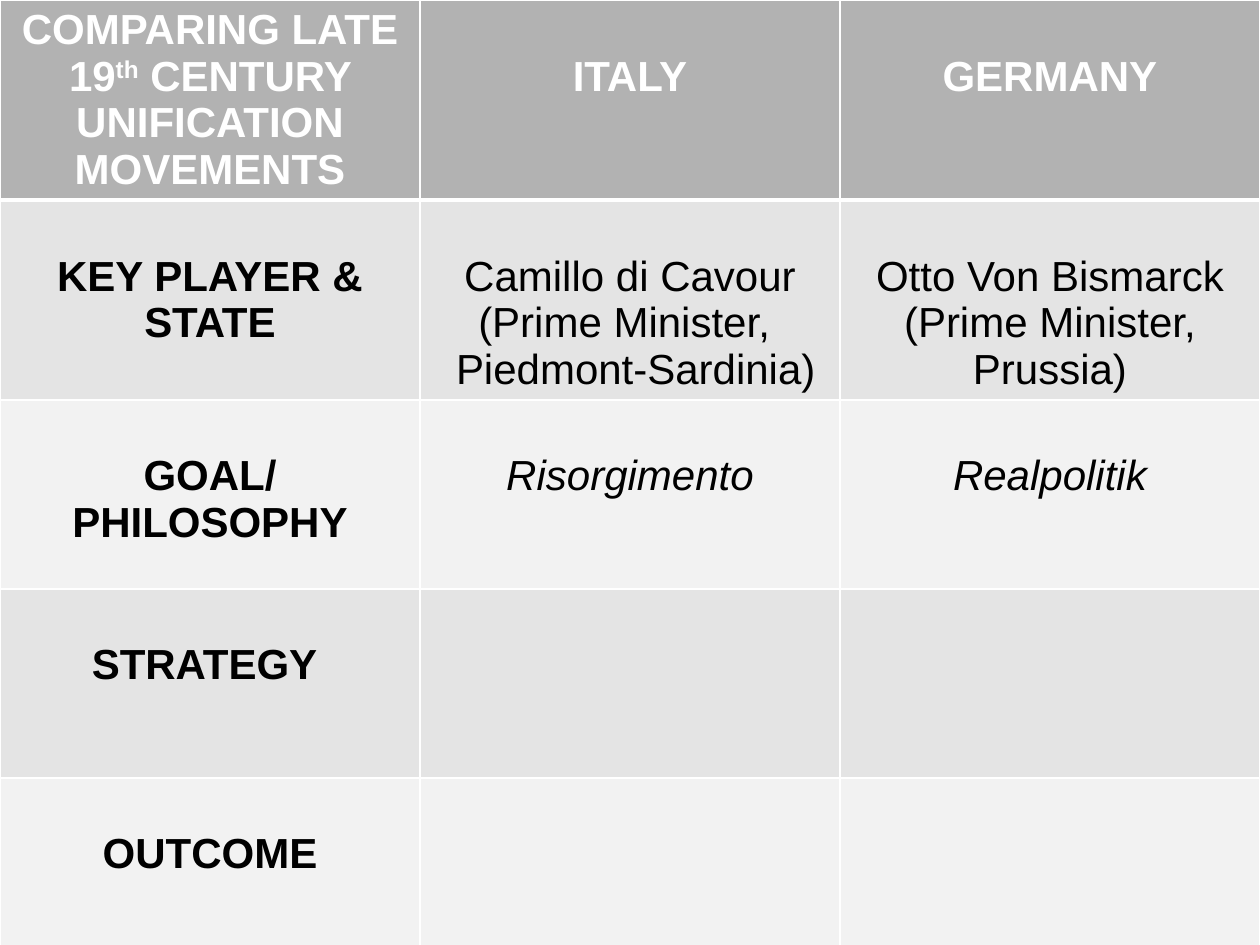
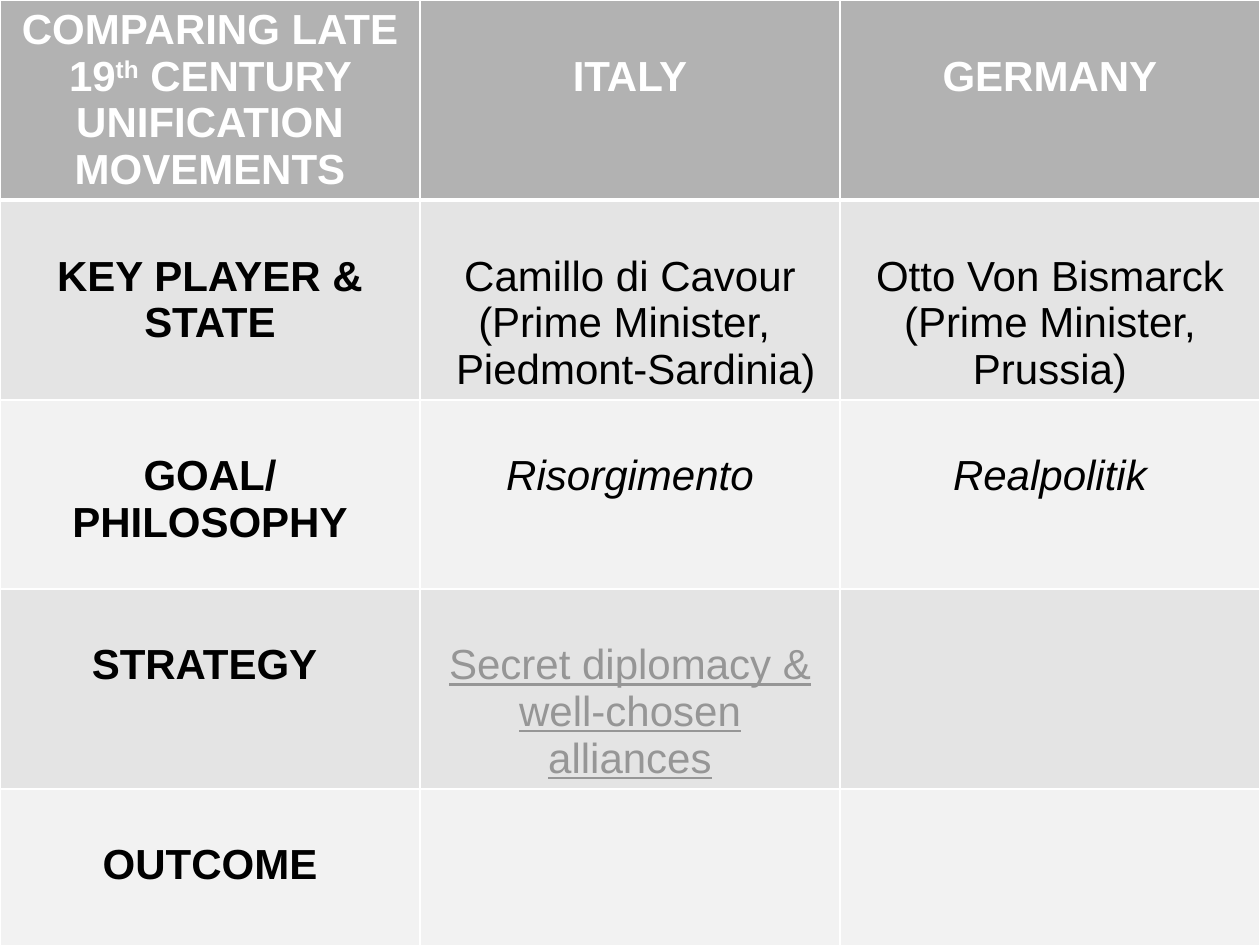
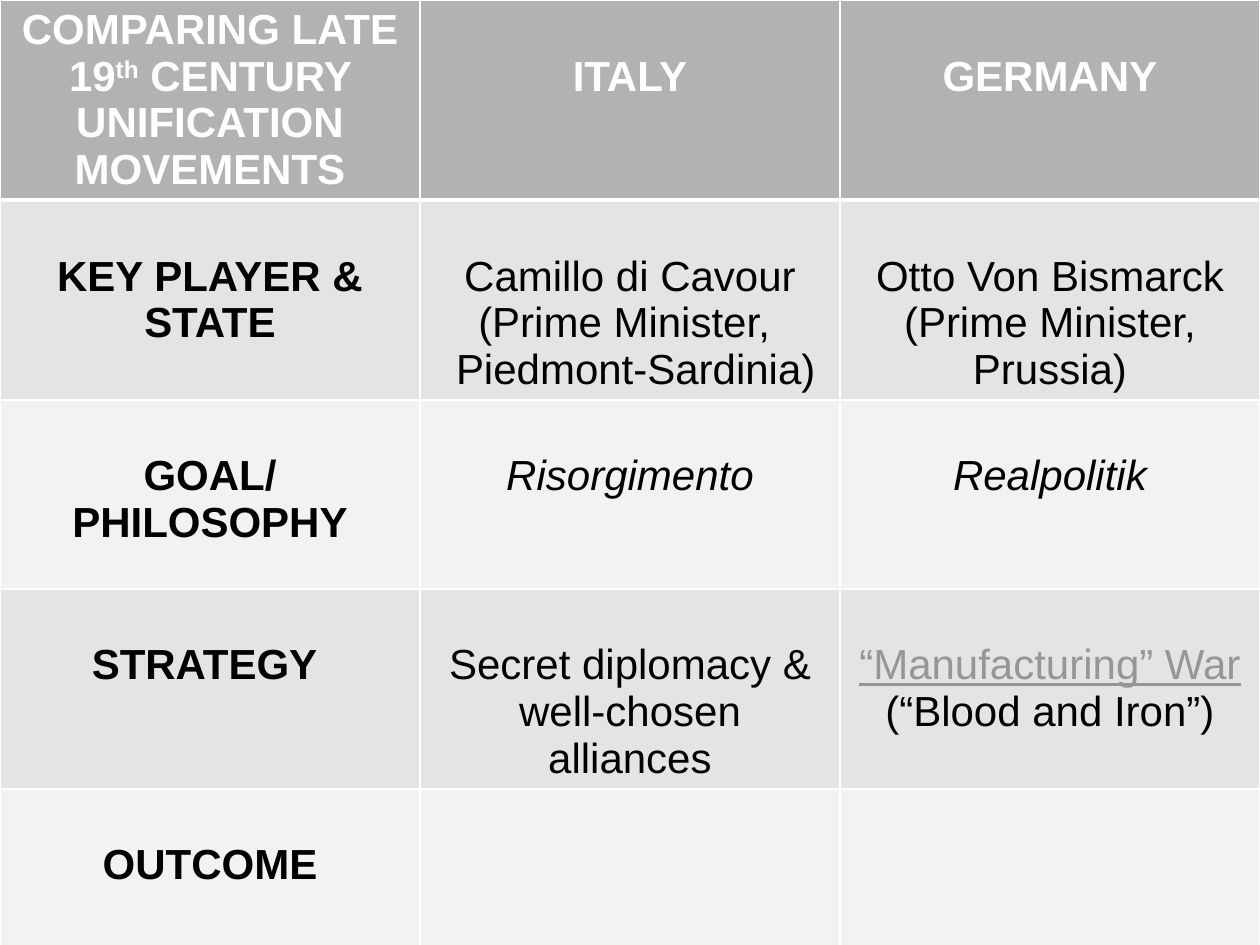
from lxml import etree
from pptx import Presentation
from pptx.dml.color import RGBColor
from pptx.enum.text import PP_ALIGN
from pptx.oxml.ns import qn
from pptx.util import Cm, Pt

CENTER = PP_ALIGN.CENTER
WIDTH, HEIGHT = Cm(25.4), Cm(19.05)
ONE_LINE_DOWN = Cm(1.07)
BLANK_LAYOUT = 6

COLORS = {
    "background": "000000",
    "header": "B2B2B2",
    "odd": "E4E4E4",
    "even": "F2F2F2",
    "grid": "FFFFFF",
    "white": "FFFFFF",
    "black": "000000",
    "accent": "969696",
}

BASE = {"name": "Arial", "size": Pt(24), "bold": False}
STYLES = {
    "header": ("white", {"bold": True}),
    "label": ("black", {"bold": True}),
    "plain": ("black", {}),
    "term": ("black", {"italic": True}),
    "accent": ("accent", {"underline": True}),
}

HEADERS = [
    [("COMPARING LATE 19", "th", " CENTURY UNIFICATION MOVEMENTS")],
    ["ITALY"],
    ["GERMANY"],
]
KEY_PLAYERS = [
    ("plain", ["Camillo di Cavour", "(Prime Minister, ", " Piedmont-Sardinia)"]),
    ("plain", ["Otto Von Bismarck", "(Prime Minister, Prussia)"]),
]
GOALS = [("term", ["Risorgimento"]), ("term", ["Realpolitik"])]
DIPLOMACY = ["Secret diplomacy & well-chosen alliances"]
STRATEGIES = [
    [],
    [("accent", DIPLOMACY)],
    [("plain", DIPLOMACY),
     ("accent plain", ["“Manufacturing” War", "(“Blood and Iron”)"])],
]


def rgb(name):
    """Return the named colour."""
    return RGBColor.from_string(COLORS[name])


def add_run(p, text, style, superscript=False):
    """Add one formatted run to a paragraph."""
    color, extra = STYLES[style]
    r = p.add_run()
    r.text = text
    for key, value in {**BASE, **extra}.items():
        setattr(r.font, key, value)
    r.font.color.rgb = rgb(color)
    if superscript:
        r._r.get_or_add_rPr().set("baseline", "30000")


def fill_text(cell, styles, paragraphs):
    """Write centred paragraphs, the last style serving those that remain."""
    tf = cell.text_frame
    names = styles.split()
    for i, content in enumerate(paragraphs):
        p = tf.add_paragraph() if i else tf.paragraphs[0]
        p.alignment = CENTER
        parts = (content,) if isinstance(content, str) else content
        for j, text in enumerate(parts):
            add_run(p, text, names[min(i, len(names) - 1)], j == 1)


def set_borders(cell, row):
    """Draw the white grid, thicker under the header row."""
    widths = {
        "a:lnL": 1,
        "a:lnR": 1,
        "a:lnT": 3 if row == 1 else 1,
        "a:lnB": 3 if row == 0 else 1,
    }
    tcPr = cell._tc.get_or_add_tcPr()
    for tag, width in widths.items():
        line = etree.SubElement(tcPr, qn(tag), w=str(Pt(width)))
        fill = etree.SubElement(line, qn("a:solidFill"))
        etree.SubElement(fill, qn("a:srgbClr"), val=COLORS["grid"])


def format_cell(cell, row, col):
    """Give a cell its grid lines, band fill and top margin."""
    set_borders(cell, row)
    band = "header" if row == 0 else "odd" if row % 2 else "even"
    cell.fill.solid()
    cell.fill.fore_color.rgb = rgb(band)
    if row or col:
        cell.margin_top = ONE_LINE_DOWN


def add_comparison_slide(prs, strategies):
    """Add a slide filled by the comparison table."""
    s = prs.slides.add_slide(prs.slide_layouts[BLANK_LAYOUT])
    s.background.fill.solid()
    s.background.fill.fore_color.rgb = rgb("background")
    rows = [
        [("header", header) for header in HEADERS],
        [("label", ["KEY PLAYER & STATE"]), *KEY_PLAYERS],
        [("label", ["GOAL/PHILOSOPHY"]), *GOALS],
        [("label", ["STRATEGY "]), *strategies],
        [("label", ["OUTCOME"])],
    ]
    table = s.shapes.add_table(len(rows), len(HEADERS), 0, 0, WIDTH, HEIGHT).table
    for i, contents in enumerate(rows):
        for j in range(len(HEADERS)):
            format_cell(table.cell(i, j), i, j)
        for j, (styles, paragraphs) in enumerate(contents):
            fill_text(table.cell(i, j), styles, paragraphs)


def main():
    """Build one slide for each step of the strategy row."""
    prs = Presentation()
    prs.slide_width, prs.slide_height = WIDTH, HEIGHT
    for strategies in STRATEGIES:
        add_comparison_slide(prs, strategies)
    prs.save("out.pptx")


if __name__ == "__main__":
    main()
